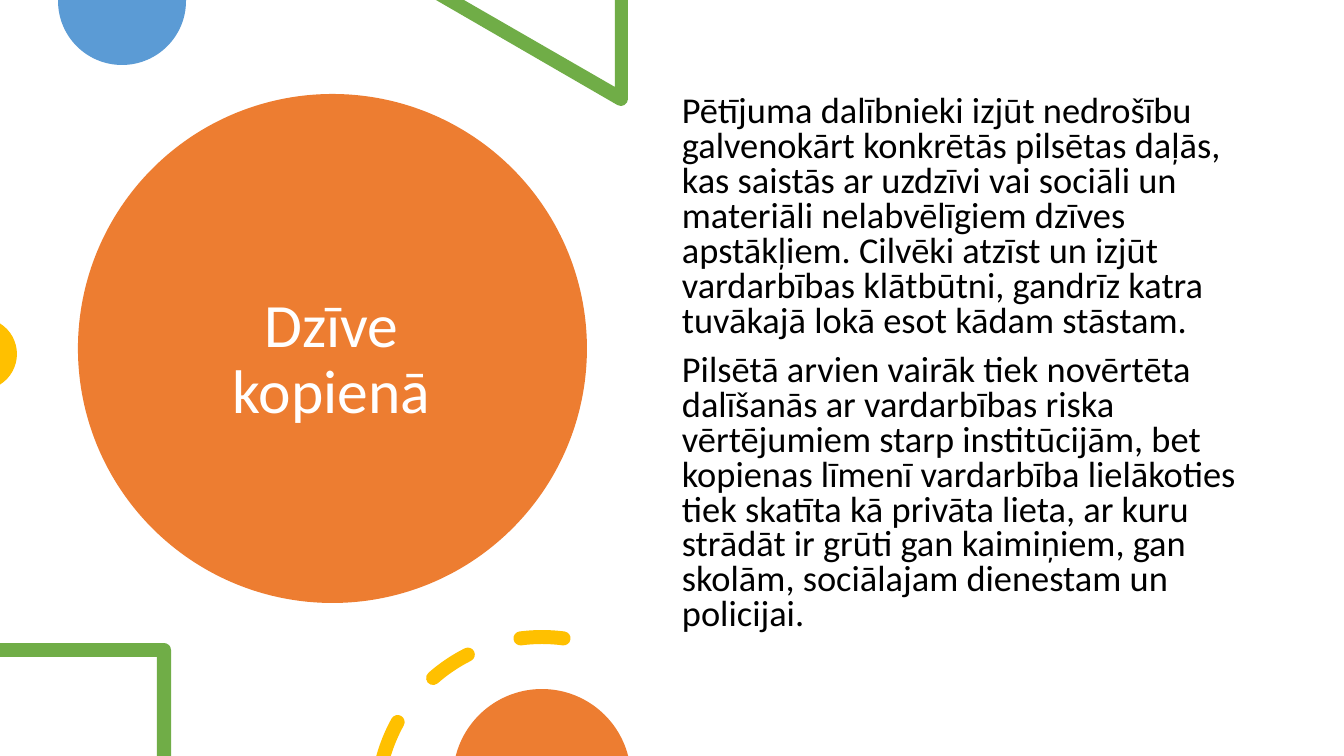
from math import ceil, cos, radians, sin, tan

from lxml import etree
from pptx import Presentation
from pptx.dml.color import RGBColor
from pptx.enum.shapes import MSO_SHAPE
from pptx.enum.text import MSO_ANCHOR, MSO_AUTO_SIZE, PP_ALIGN
from pptx.oxml.ns import qn
from pptx.util import Pt

WIDTH, HEIGHT = 1344, 756
EMU_PER_PX = 12192000 / WIDTH
FONT = "Calibri"
COLORS = {
    "orange": "ED7D31",
    "blue": "5B9BD5",
    "green": "70AD47",
    "yellow": "FFC000",
    "white": "FFFFFF",
    "black": "000000",
}
TITLE = "Dzīve kopienā"
BODY = [
    "Pētījuma dalībnieki izjūt nedrošību galvenokārt konkrētās pilsētas daļās, "
    "kas saistās ar uzdzīvi vai sociāli un materiāli nelabvēlīgiem dzīves "
    "apstākļiem. Cilvēki atzīst un izjūt vardarbības klātbūtni, gandrīz katra "
    "tuvākajā lokā esot kādam stāstam.",
    "Pilsētā arvien vairāk tiek novērtēta dalīšanās ar vardarbības riska "
    "vērtējumiem starp institūcijām, bet kopienas līmenī vardarbība lielākoties "
    "tiek skatīta kā privāta lieta, ar kuru strādāt ir grūti gan kaimiņiem, gan "
    "skolām, sociālajam dienestam un policijai.",
]


def px(length):
    """Turn a length in px into EMU."""
    return round(length * EMU_PER_PX)


def color(name):
    """Look up a named colour."""
    return RGBColor.from_string(COLORS[name])


def paint(shape, fill):
    """Give a shape a plain fill without line or shadow."""
    shape.fill.solid()
    shape.fill.fore_color.rgb = color(fill)
    shape.line.fill.background()
    shape.shadow.inherit = False


def write(shape, texts, size, fill, align, line_spacing, space_before=0,
          anchor=MSO_ANCHOR.TOP):
    """Write paragraphs into a shape with one format."""
    frame = shape.text_frame
    frame.word_wrap = True
    frame.auto_size = MSO_AUTO_SIZE.NONE
    frame.vertical_anchor = anchor
    for index, text in enumerate(texts):
        paragraph = frame.add_paragraph() if index else frame.paragraphs[0]
        paragraph.alignment = align
        paragraph.line_spacing = line_spacing
        paragraph.space_before = Pt(space_before)
        run = paragraph.add_run()
        run.text = text
        run.font.name = FONT
        run.font.size = Pt(size)
        run.font.color.rgb = color(fill)


def polar(center, radius, angle):
    """Find a point on a circle, with degrees running clockwise from the right."""
    turn = radians(angle)
    return center[0] + radius * cos(turn), center[1] + radius * sin(turn)


def lines(*points):
    """Turn points into straight segments."""
    return [(point,) for point in points]


def arc(center, radius, start, end):
    """List the start point of an arc and its curves of at most 90 degrees."""
    count = ceil(abs(end - start) / 90)
    step = (end - start) / count
    reach = radius * 4 / 3 * tan(radians(step / 4))
    segments = lines(polar(center, radius, start))
    for index in range(count):
        a = start + index * step
        b = a + step
        first, last = polar(center, radius, a), polar(center, radius, b)
        segments.append((polar(first, reach, a + 90), polar(last, reach, b - 90), last))
    return segments


def dash(center, radius, start, end, half=7):
    """Outline a round-ended piece of a ring."""
    first, last = polar(center, radius, start), polar(center, radius, end)
    return (
        arc(center, radius + half, start, end)
        + arc(last, half, end, end + 180)[1:]
        + arc(center, radius - half, end, start)[1:]
        + arc(first, half, start + 180, start + 360)[1:]
    )


def cut_dash(center, radius, outer_start, inner_start, end, half=7):
    """Outline a piece of a ring with one round end and one flat end."""
    return (
        arc(center, radius + half, outer_start, end)
        + arc(polar(center, radius, end), half, end, end + 180)[1:]
        + arc(center, radius - half, end, inner_start)[1:]
    )


def add_outline(slide, fill, *contours):
    """Draw closed contours of lines and curves as one filled freeform."""
    builder = None
    for contour in contours:
        points = [(px(x), px(y)) for segment in contour for x, y in segment]
        if builder is None:
            builder = slide.shapes.build_freeform(*points[0])
        else:
            builder.move_to(*points[0])
        builder.add_line_segments(points[1:], close=True)
    shape = builder.convert_to_shape()
    paint(shape, fill)
    steps = shape._element.iter(qn("a:moveTo"), qn("a:lnTo"))
    steps = iter(list(steps))
    for segment in (segment for contour in contours for segment in contour):
        group = [next(steps) for _ in segment]
        if len(group) == 3:
            curve = etree.Element(qn("a:cubicBezTo"))
            group[0].addprevious(curve)
            for step in group:
                curve.append(step[0])
                step.getparent().remove(step)


def add_top_decor(slide):
    """Draw the blue disc and green triangle cut by the top edge."""
    add_outline(slide, "blue", lines((186, 0), (58, 0)) + arc((122, 1), 64, 180, 0))
    add_outline(slide, "green", lines((628, 0), (615, 0), (615, 87), (464, 0), (436, 0))
                + arc((621, 99), 7, 120, 0))


def add_bottom_decor(slide):
    """Draw the green frame, dashed ring and orange disc at the foot."""
    add_outline(slide, "green", arc((164, 650), 7, 360, 270)
                + lines((0, 643), (0, 657), (157, 657), (157, HEIGHT), (171, HEIGHT)))
    ring, radius = (542, 802), 165
    add_outline(slide, "yellow", cut_dash(ring, radius, 195.5, 196.9, 209),
                dash(ring, radius, 228.7, 243.3), dash(ring, radius, 262.5, 277.5))
    add_outline(slide, "orange", arc((542, 778), 89, 194.3, 345.7))


def add_title_disc(slide, left, top, size):
    """Draw the orange disc and lay the title over it."""
    disc = slide.shapes.add_shape(MSO_SHAPE.OVAL, px(left), px(top), px(size), px(size))
    paint(disc, "orange")
    title = slide.shapes.title
    title.left, title.top = px(left + 75), px(top + 42)
    title.width, title.height = px(357), px(449)
    write(title, [TITLE], size=44, fill="white", align=PP_ALIGN.CENTER,
          line_spacing=0.9, anchor=MSO_ANCHOR.MIDDLE)
    disc._element.addnext(title._element)


def add_body(slide, left, top, width, height):
    """Place the two body paragraphs."""
    box = slide.shapes.add_textbox(px(left), px(top), px(width), px(height))
    write(box, BODY, size=26, fill="black", align=PP_ALIGN.LEFT,
          line_spacing=0.8, space_before=10)


def main():
    """Build and save the slide."""
    presentation = Presentation()
    presentation.slide_width, presentation.slide_height = px(WIDTH), px(HEIGHT)
    slide = presentation.slides.add_slide(presentation.slide_layouts[5])
    add_title_disc(slide, 78, 94, 509)
    add_top_decor(slide)
    add_outline(slide, "yellow", arc((-19, 354), 36, -58, 58))
    add_body(slide, 672, 91, 605, 574)
    add_bottom_decor(slide)
    presentation.save("out.pptx")


if __name__ == "__main__":
    main()
